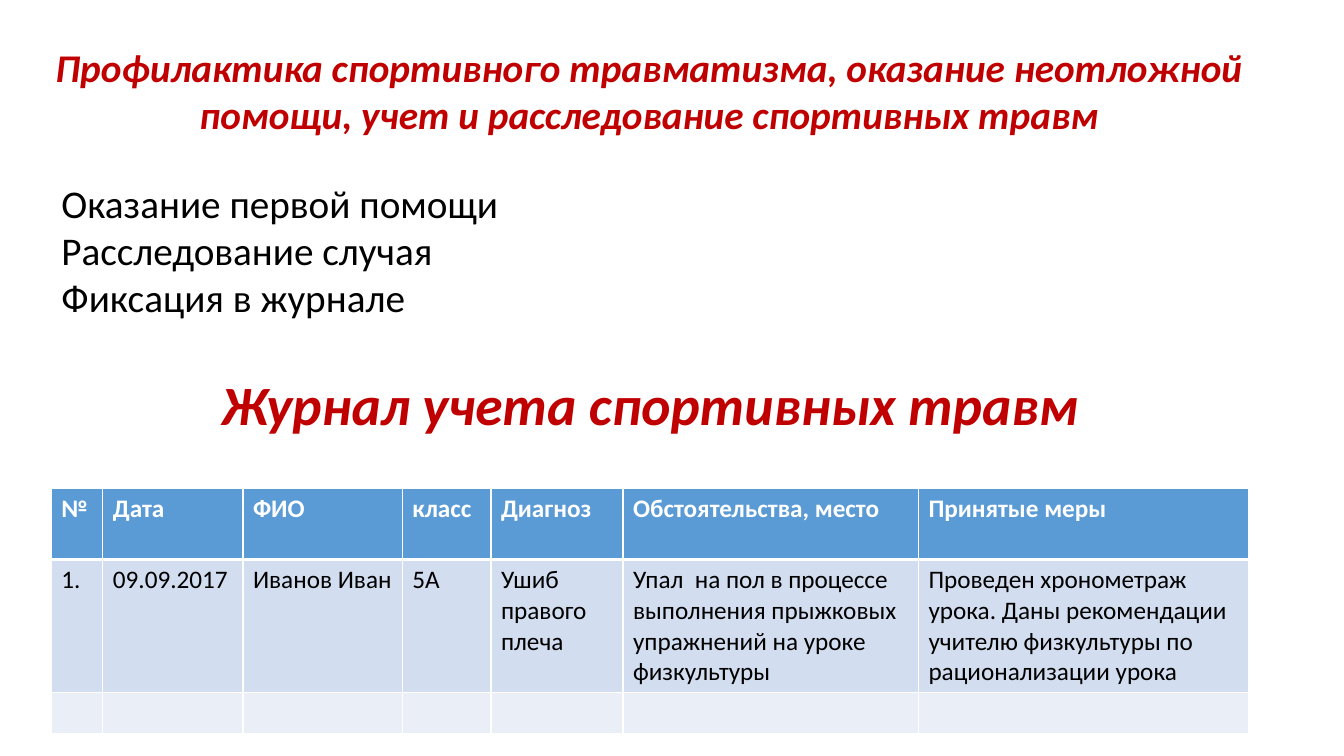
import pptx
import pptx.util
import pptx.dml.color
import pptx.enum.text
from lxml import etree
from pptx.oxml.ns import qn

Inches = pptx.util.Inches
Pt = pptx.util.Pt
RGBColor = pptx.dml.color.RGBColor
Align = pptx.enum.text.PP_ALIGN
Anchor = pptx.enum.text.MSO_ANCHOR
Fit = pptx.enum.text.MSO_AUTO_SIZE

RED = RGBColor(0xC0, 0x00, 0x00)
BLACK = RGBColor(0x00, 0x00, 0x00)
WHITE = RGBColor(0xFF, 0xFF, 0xFF)
BLUE = RGBColor(0x5B, 0x9B, 0xD5)
PALE = RGBColor(0xD2, 0xDE, 0xEF)
LIGHT = RGBColor(0xEA, 0xEF, 0xF7)

HEAD = ["№", "Дата", "ФИО", "класс", "Диагноз", "Обстоятельства, место", "Принятые меры"]
CASE = [
    "1.", "09.09.2017", "Иванов Иван", "5А", "Ушиб правого плеча",
    "Упал  на пол в процессе выполнения прыжковых упражнений на уроке физкультуры",
    "Проведен хронометраж урока. Даны рекомендации учителю физкультуры по рационализации урока",
]
COLS = [0.51, 1.39, 1.58, 0.88, 1.31, 2.93, 3.27]
ROWS = [0.7, 1.31, 0.4]


def write(frame, text, size=28, color=BLACK, bold=False, italic=False,
          align=Align.LEFT, space=1.0, font="Calibri"):
    """Fill a text frame, one paragraph per line of text."""
    frame.word_wrap = True
    for i, line in enumerate(text.split("\n")):
        para = frame.add_paragraph() if i else frame.paragraphs[0]
        para.alignment = align
        para.line_spacing = space
        para.space_before = Pt(0)
        run = para.add_run()
        run.text = line
        run.font.name = font
        run.font.size = Pt(size)
        run.font.bold = bold
        run.font.italic = italic
        run.font.color.rgb = color


def edge(cell, widths):
    """Draw white borders; widths are points for left, right, top, bottom."""
    props = cell._tc.get_or_add_tcPr()
    for i, (side, width) in enumerate(zip("LRTB", widths)):
        line = etree.Element(qn(f"a:ln{side}"), w=str(Pt(width)))
        fill = etree.SubElement(line, qn("a:solidFill"))
        etree.SubElement(fill, qn("a:srgbClr"), val=str(WHITE))
        props.insert(i, line)


class Deck:
    def __init__(self):
        self.show = pptx.Presentation()
        self.show.slide_width = Inches(13.33)
        self.show.slide_height = Inches(7.5)
        self.slide = self.show.slides.add_slide(self.show.slide_layouts[1])

    def place(self, shape, box):
        shape.left, shape.top, shape.width, shape.height = map(Inches, box)
        shape.text_frame.auto_size = Fit.NONE
        return shape.text_frame

    def title(self, text, box, **style):
        frame = self.place(self.slide.shapes.title, box)
        frame.vertical_anchor = Anchor.MIDDLE
        write(frame, text, **style)

    def list(self, text, box, **style):
        """Put plain lines without bullets in the body placeholder."""
        frame = self.place(self.slide.placeholders[1], box)
        write(frame, text, **style)
        for para in frame.paragraphs:
            props = para._p.get_or_add_pPr()
            props.set("marL", "0")
            props.set("indent", "0")
            etree.SubElement(props, qn("a:buNone"))

    def text(self, text, box, **style):
        shape = self.slide.shapes.add_textbox(*map(Inches, box))
        write(self.place(shape, box), text, **style)

    def table(self, left, top, cols, rows, data, fills):
        table = self.slide.shapes.add_table(
            len(rows), len(cols), Inches(left), Inches(top),
            Inches(sum(cols)), Inches(sum(rows))).table
        for col, width in zip(table.columns, cols):
            col.width = Inches(width)
        for r, height in enumerate(rows):
            table.rows[r].height = Inches(height)
            for c, text in enumerate(data[r]):
                cell = table.cell(r, c)
                cell.fill.solid()
                cell.fill.fore_color.rgb = fills[r]
                edge(cell, (1, 1, 3 if r == 1 else 1, 3 if r == 0 else 1))
                if text:
                    write(cell.text_frame, text, size=18, bold=r == 0,
                          color=BLACK if r else WHITE)


def main():
    deck = Deck()
    accent = dict(color=RED, bold=True, italic=True, align=Align.CENTER)
    deck.title("Журнал учета спортивных травм", (0.7, 3.79, 11.5, 0.5),
               size=39.6, space=0.9, **accent)
    deck.table(0.51, 4.85, COLS, ROWS, [HEAD, CASE, [""] * len(COLS)],
               [BLUE, PALE, LIGHT])
    deck.text("Профилактика спортивного травматизма, оказание неотложной помощи, "
              "учет и расследование спортивных травм",
              (0.32, 0.38, 12.23, 1.04), **accent)
    deck.list("Оказание первой помощи\nРасследование случая\nФиксация в журнале",
              (0.51, 1.73, 12.23, 1.51))
    deck.show.save("out.pptx")


if __name__ == "__main__":
    main()
